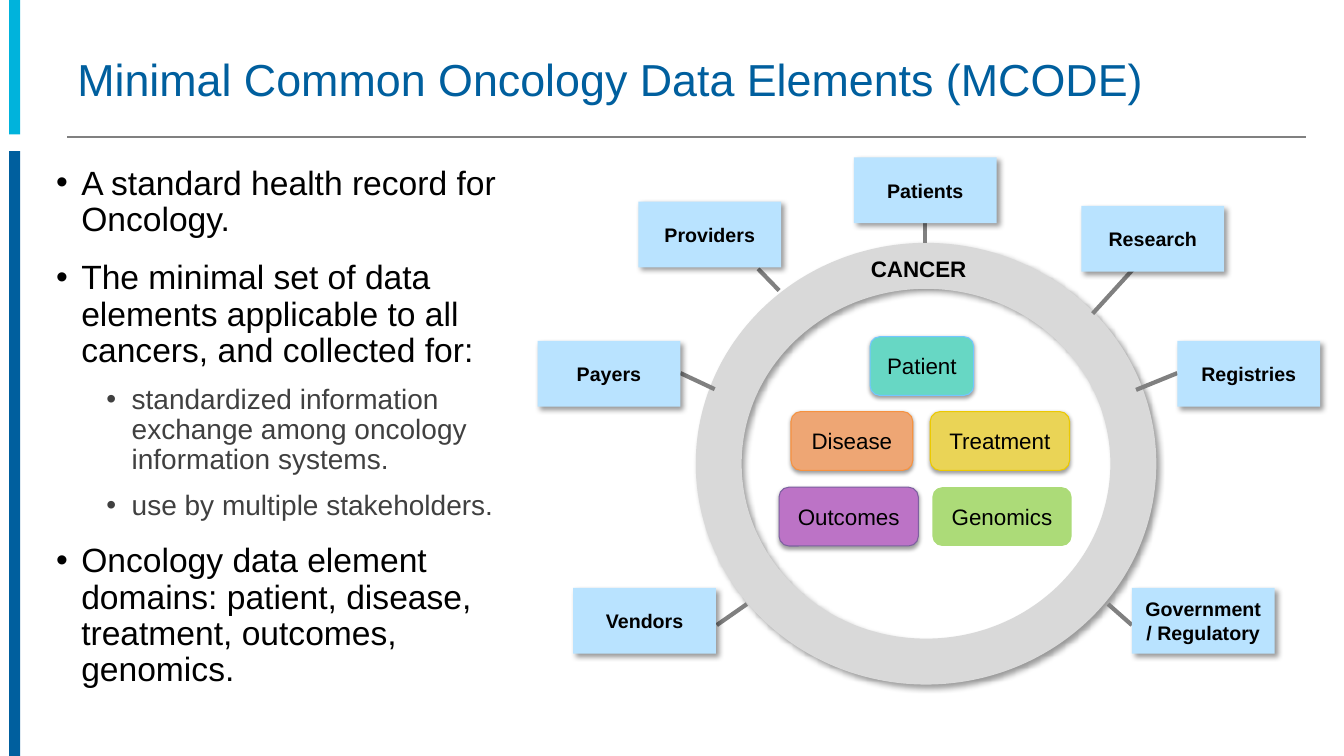
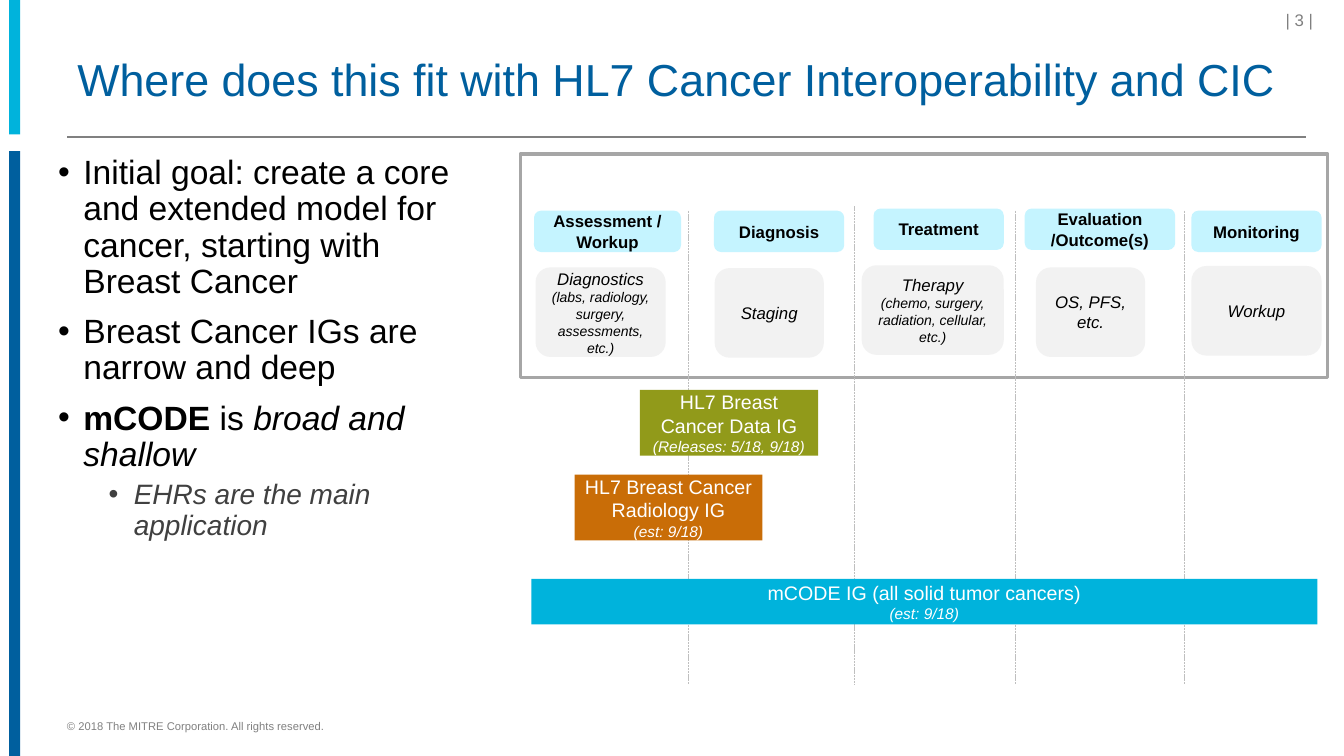
from lxml import etree
from pptx import Presentation
from pptx.dml.color import RGBColor
from pptx.enum.dml import MSO_LINE
from pptx.enum.shapes import MSO_CONNECTOR, MSO_SHAPE
from pptx.enum.text import MSO_ANCHOR, MSO_AUTO_SIZE, PP_ALIGN
from pptx.oxml.ns import qn
from pptx.util import Pt

RECT, ROUNDED, DONUT = MSO_SHAPE.RECTANGLE, MSO_SHAPE.ROUNDED_RECTANGLE, MSO_SHAPE.DONUT
LEFT, CENTER, RIGHT = PP_ALIGN.LEFT, PP_ALIGN.CENTER, PP_ALIGN.RIGHT
MIDDLE, TOP = MSO_ANCHOR.MIDDLE, MSO_ANCHOR.TOP
STRAIGHT, DASHED = MSO_CONNECTOR.STRAIGHT, MSO_LINE.SQUARE_DOT

FONT = "Arial"
BLUE, CYAN, GRAY = "005F9E", "00B3DC", "808080"
BLACK, WHITE, DARK = "000000", "FFFFFF", "404040"
# Shadows: opacity in percent, blur and distance in points, angle in degrees
DEEP_SHADOW = (40, 4, 3, 45)
SOFT_SHADOW = (38, 3.1, 1.6, 90)
rgb = RGBColor.from_string


def add_box(page, kind, place, fill=None, outline=None, shadow=None,
            lines=(), ink=BLACK, align=CENTER):
    """Add a shape, or a text box if kind is None; lines hold (text, size, style)."""
    place = [Pt(length) for length in place]
    if kind is None:
        box = page.shapes.add_textbox(*place)
    else:
        box = page.shapes.add_shape(kind, *place)
        box.shadow.inherit = False
        if fill:
            box.fill.solid()
            box.fill.fore_color.rgb = rgb(fill)
        else:
            box.fill.background()
        if outline:
            box.line.color.rgb = rgb(outline[0])
            box.line.width = Pt(outline[1])
        else:
            box.line.fill.background()
    if shadow:
        opacity, blur, distance, angle = shadow
        effects = box._element.spPr.find(qn("a:effectLst"))
        outer = etree.SubElement(effects, qn("a:outerShdw"), blurRad=str(Pt(blur)),
                                 dist=str(Pt(distance)), dir=str(angle * 60000),
                                 algn="ctr", rotWithShape="0")
        color = etree.SubElement(outer, qn("a:srgbClr"), val=BLACK)
        etree.SubElement(color, qn("a:alpha"), val=str(opacity * 1000))
    frame = box.text_frame
    frame.word_wrap = True
    frame.vertical_anchor = MIDDLE
    for index, (text, size, style) in enumerate(lines):
        para = frame.add_paragraph() if index else frame.paragraphs[0]
        para.alignment = align
        span = para.add_run()
        span.text = text
        span.font.name = FONT
        span.font.size = Pt(size)
        span.font.bold = "b" in style
        span.font.italic = "i" in style
        span.font.color.rgb = rgb(ink)
    return box


def add_line(page, start, end, color, width):
    line = page.shapes.add_connector(STRAIGHT, *[Pt(length) for length in start + end])
    line.line.color.rgb = rgb(color)
    line.line.width = Pt(width)
    etree.SubElement(line._element.spPr, qn("a:effectLst"))
    return line


deck = Presentation()
deck.slide_width, deck.slide_height = Pt(960), Pt(540)

# Title, body place, space after a bullet, bullets as (level, runs)
outlines = [
    ("Minimal Common Oncology Data Elements (MCODE)", (33, 115, 345.5, 403), 6, [
        (0, [("A standard health record for Oncology.", "")]),
        (0, [("The minimal set of data elements applicable to all cancers, "
              "and collected for:", "")]),
        (1, [("standardized information exchange among oncology "
              "information systems.", "")]),
        (1, [("use by multiple stakeholders.", "")]),
        (0, [("Oncology data element domains: patient, disease, treatment, "
              "outcomes, genomics.", "")]),
    ]),
    ("Where does this fit with HL7 Cancer Interoperability and CIC",
     (34.5, 107.5, 301.5, 275), 0, [
        (0, [("Initial goal: create a core and extended model for cancer, "
              "starting with Breast Cancer", "")]),
        (0, [("Breast Cancer IGs are narrow and deep", "")]),
        (0, [("mCODE", "b"), (" is ", ""), ("broad and shallow", "i")]),
        (1, [("EHRs are the main application", "i")]),
    ]),
]
# Per bullet level: indent, space before, size, colour
LEVELS = [(18, 10, 24, BLACK), (54, 5, 20, DARK)]

pages = []
for title, body_place, space_after, bullets in outlines:
    page = deck.slides.add_slide(deck.slide_layouts[5])
    pages.append(page)
    add_box(page, RECT, (6.5, 0, 8, 96), CYAN)
    add_box(page, RECT, (6.5, 108, 8, 432), BLUE)
    add_line(page, (48, 98), (933, 98), GRAY, 1)

    heading = page.shapes.title
    heading.left, heading.top, heading.width, heading.height = Pt(48), Pt(29), Pt(885), Pt(59)
    frame = heading.text_frame
    frame.auto_size = MSO_AUTO_SIZE.NONE
    frame.vertical_anchor = MIDDLE
    para = frame.paragraphs[0]
    para.alignment = LEFT
    para.line_spacing = 0.9
    span = para.add_run()
    span.text = title
    span.font.name, span.font.size = FONT, Pt(32)
    span.font.color.rgb = rgb(BLUE)

    frame = add_box(page, None, body_place).text_frame
    frame.vertical_anchor = TOP
    for index, (level, runs) in enumerate(bullets):
        indent, space_before, size, color = LEVELS[level]
        para = frame.add_paragraph() if index else frame.paragraphs[0]
        para.level = level
        properties = para._p.get_or_add_pPr()
        properties.set("marL", str(Pt(indent)))
        properties.set("indent", str(Pt(-18)))
        etree.SubElement(properties, qn("a:buFont"), typeface=FONT)
        etree.SubElement(properties, qn("a:buChar"), char="•")
        para.line_spacing = 0.9
        para.space_before = Pt(space_before if index else 0)
        para.space_after = Pt(space_after)
        for text, style in runs:
            span = para.add_run()
            span.text = text
            span.font.name, span.font.size = FONT, Pt(size)
            span.font.bold, span.font.italic = style == "b", style == "i"
            span.font.color.rgb = rgb(color)

wheel_page, timeline_page = pages

# Slide 1: cancer ring, data domains and stakeholders
ring = add_box(wheel_page, DONUT, (497, 173.5, 329, 315.5), "D9D9D9", shadow=DEEP_SHADOW)
ring.adjustments[0] = 0.104
add_box(wheel_page, None, (615, 178.5, 100, 26.5), lines=[("CANCER", 16, "b")], align=LEFT)

domains = [
    ("Patient", 621.5, 240.5, 74, "67D7C4", ("72C7FF", 0.75), SOFT_SHADOW),
    ("Disease", 565, 294, 87, "EEA674", ("F69240", 0.75), SOFT_SHADOW),
    ("Treatment", 664.5, 294, 99.5, "EAD456", ("ECC900", 0.75), SOFT_SHADOW),
    ("Outcomes", 556.5, 348, 99.5, "BC73C6", ("7D60A0", 0.75), SOFT_SHADOW),
    ("Genomics", 666, 348, 99.5, "ACDB78", None, None),
]
for label, left, top, width, fill, outline, shadow in domains:
    add_box(wheel_page, ROUNDED, (left, top, width, 42), fill, outline, shadow,
            [(label, 16, "")])

# Label, left, top, then both ends of the spoke
stakeholders = [
    ("Providers", 456, 144, (541.5, 192), (556.5, 207.5)),
    ("Research", 772.5, 147, (811.5, 190), (780.5, 224)),
    ("Payers", 384, 243.5, (486, 266.5), (510.5, 278)),
    ("Government / Regulatory", 808.5, 420, (791.5, 431.5), (808.5, 446.5)),
    ("Vendors", 409.5, 420, (512, 446.5), (533.5, 431.5)),
    ("Patients", 610, 112.5, (661, 158.5), (661, 173.5)),
    ("Registries", 841, 243.5, (841, 266.5), (811.5, 278.5)),
]
for label, left, top, start, end in stakeholders:
    add_line(wheel_page, start, end, GRAY, 3)
    add_box(wheel_page, RECT, (left, top, 102, 47), "B9E3FF", shadow=DEEP_SHADOW,
            lines=[(label, 14, "b")])

# Slide 2: care phases and the guides that cover them
add_box(timeline_page, None, (40.8, 509, 593, 18.5), ink=GRAY, align=LEFT,
        lines=[("© 2018 The MITRE Corporation. All rights reserved.", 8, "")])
add_box(timeline_page, None, (809, 4.5, 136, 20), ink=GRAY, align=RIGHT,
        lines=[("| 3 |", 12, "")])
add_box(timeline_page, RECT, (371.5, 110, 577, 160), outline=("A6A6A6", 2.25))

# Header and its left, top, width; card lines and their left, top, width
phases = [
    ("Assessment / Workup", (381.5, 150.5, 105),
     [("Diagnostics", 12, "i"), ("(labs, radiology, surgery, assessments, etc.)", 10, "i")],
     (382.5, 191, 93)),
    ("Diagnosis", (510, 150.5, 93), [("Staging", 12, "i")], (510.5, 191.5, 78)),
    ("Treatment", (624, 149, 93),
     [("Therapy", 12, "i"), ("(chemo, surgery, radiation, cellular, etc.)", 10, "i")],
     (615.5, 189.5, 101.5)),
    ("Evaluation /Outcome(s)", (732, 149, 107.5), [("OS, PFS, etc.", 12, "i")],
     (740, 191, 78)),
    ("Monitoring", (851, 150.5, 93), [("Workup", 12, "i")], (851, 190, 93)),
]
for header, header_place, card, card_place in phases:
    add_box(timeline_page, ROUNDED, header_place + (29.5,), "C5F4FF",
            lines=[(header, 12, "b")])
    add_box(timeline_page, ROUNDED, card_place + (64,), "F2F2F2", lines=card)

for x, top in [(492, 150.5), (610, 147.5), (725.5, 150.5), (846, 150.5)]:
    divider = add_line(timeline_page, (x, top), (x, 488.5), "BFBFBF", 0.5)
    divider.line.dash_style = DASHED

guides = [
    ("HL7 Breast Cancer Data IG", "(Releases: 5/18, 9/18)", (457, 278.5, 127.5, 47), "919A1A"),
    ("HL7 Breast Cancer Radiology IG", "(est: 9/18)", (410.5, 339, 134, 47), "C96D07"),
    ("mCODE IG (all solid tumor cancers)", "(est: 9/18)", (379.5, 413.5, 561.5, 32.5), CYAN),
]
for name, release, place, fill in guides:
    add_box(timeline_page, RECT, place, fill, ink=WHITE,
            lines=[(name, 14, ""), (release, 11, "i")])

deck.save("out.pptx")
